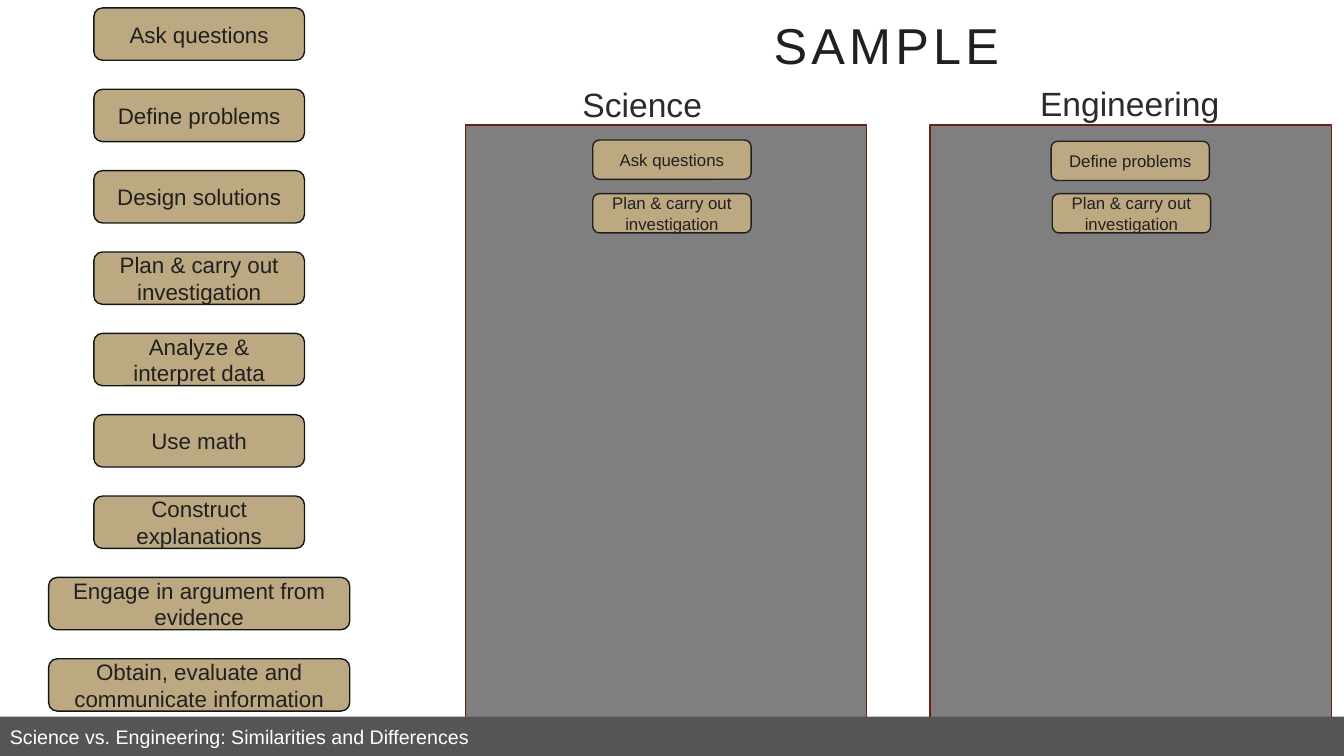
from dataclasses import dataclass

from pptx import Presentation
from pptx.dml.color import RGBColor
from pptx.enum.shapes import MSO_SHAPE as Preset
from pptx.enum.text import MSO_ANCHOR as Anchor, MSO_AUTO_SIZE as AutoSize, PP_ALIGN as Align
from pptx.slide import Slide
from pptx.text.text import TextFrame
from pptx.util import Cm, Pt

WHITE = RGBColor(0xFF, 0xFF, 0xFF)
INK = RGBColor(0x20, 0x20, 0x20)
LABEL_INK = RGBColor(0x2B, 0x2B, 0x2B)
CARD_EDGE = RGBColor(0x14, 0x17, 0x18)
TAN = RGBColor(0xBD, 0xA9, 0x81)
GRAY = RGBColor(0x7F, 0x7F, 0x7F)
MAROON = RGBColor(0x69, 0x20, 0x0F)
FOOTER_GRAY = RGBColor(0x55, 0x55, 0x56)

SLIDE_WIDTH, SLIDE_HEIGHT = 33.87, 19.05
CARD_CENTER, CARD_TOP, CARD_PITCH, CARD_HEIGHT = 5.02, 0.2, 2.05, 1.32
NARROW, WIDE = 5.31, 7.59


@dataclass
class Box:
    """A rectangle in centimetres."""
    left: float
    top: float
    width: float
    height: float

    def lengths(self) -> list[Cm]:
        return [Cm(v) for v in (self.left, self.top, self.width, self.height)]


@dataclass
class Column:
    heading: str
    heading_box: Box
    panel: Box
    cards: list[tuple[str, Box]]


PRACTICES = [
    ("Ask questions", NARROW),
    ("Define problems", NARROW),
    ("Design solutions", NARROW),
    ("Plan & carry out investigation", NARROW),
    ("Analyze & interpret data", NARROW),
    ("Use math", NARROW),
    ("Construct explanations", NARROW),
    ("Engage in argument from evidence", WIDE),
    ("Obtain, evaluate and communicate information", WIDE),
]

COLUMNS = [
    Column("Science", Box(14.43, 1.98, 7.09, 1.27), Box(11.73, 3.15, 10.11, 14.94), [
        ("Ask questions", Box(14.94, 3.53, 3.99, 0.99)),
        ("Plan & carry out investigation", Box(14.94, 4.88, 3.99, 0.99)),
    ]),
    Column("Engineering", Box(25.96, 1.96, 7.09, 1.27), Box(23.44, 3.15, 10.11, 14.96), [
        ("Define problems", Box(26.49, 3.56, 3.99, 0.99)),
        ("Plan & carry out investigation", Box(26.52, 4.88, 3.99, 0.99)),
    ]),
]


def apply(target: object, values: dict[str, object]) -> None:
    for name, value in values.items():
        setattr(target, name, value)


def write(frame: TextFrame, text: str, size: float, color: RGBColor,
          align: Align = Align.CENTER, anchor: Anchor = Anchor.MIDDLE) -> None:
    apply(frame, {"text": text, "word_wrap": True, "vertical_anchor": anchor})
    paragraph = frame.paragraphs[0]
    paragraph.alignment = align
    font = paragraph.runs[0].font
    apply(font, {"name": "Arial", "size": Pt(size)})
    font.color.rgb = color


def add_block(slide: Slide, preset: Preset, box: Box, fill: RGBColor,
              edge: RGBColor | None = None) -> TextFrame:
    shape = slide.shapes.add_shape(preset, *box.lengths())
    shape.shadow.inherit = False
    shape.fill.solid()
    shape.fill.fore_color.rgb = fill
    if edge is None:
        shape.line.fill.background()
    else:
        shape.line.color.rgb = edge
        shape.line.width = Pt(1)
    return shape.text_frame


def add_card(slide: Slide, text: str, box: Box, size: float, edge: RGBColor) -> None:
    write(add_block(slide, Preset.ROUNDED_RECTANGLE, box, TAN, edge), text, size, INK)


def add_title(slide: Slide) -> None:
    title = slide.shapes.title
    box = Box(9.22, 0.28, 26.24, 1.75)
    apply(title, dict(zip(("left", "top", "width", "height"), box.lengths())))
    write(title.text_frame, "SAMPLE", 36, INK, anchor=Anchor.BOTTOM)
    title.text_frame.auto_size = AutoSize.NONE
    paragraph = title.text_frame.paragraphs[0]
    paragraph.line_spacing = 0.9
    paragraph.runs[0].font._element.set("spc", "300")


def add_heading(slide: Slide, column: Column) -> None:
    frame = slide.shapes.add_textbox(*column.heading_box.lengths()).text_frame
    write(frame, column.heading, 24, LABEL_INK, Align.LEFT, Anchor.TOP)
    frame.auto_size = AutoSize.SHAPE_TO_FIT_TEXT


def add_footer(slide: Slide) -> None:
    frame = add_block(slide, Preset.RECTANGLE, Box(0, 18.06, SLIDE_WIDTH, 0.99), FOOTER_GRAY)
    write(frame, "Science vs. Engineering: Similarities and Differences", 14, WHITE, Align.LEFT)
    apply(frame, {"margin_top": Cm(0.18), "margin_bottom": Cm(0.18)})


def main() -> None:
    presentation = Presentation()
    apply(presentation, {"slide_width": Cm(SLIDE_WIDTH), "slide_height": Cm(SLIDE_HEIGHT)})
    slide = presentation.slides.add_slide(presentation.slide_layouts[5])
    add_title(slide)

    # Sorting panels
    for column in COLUMNS:
        add_block(slide, Preset.RECTANGLE, column.panel, GRAY, MAROON)

    # Cards waiting to be sorted
    for row, (text, width) in enumerate(PRACTICES):
        box = Box(CARD_CENTER - width / 2, CARD_TOP + row * CARD_PITCH, width, CARD_HEIGHT)
        add_card(slide, text, box, 16, CARD_EDGE)

    # Headings and sorted cards
    for column in COLUMNS:
        add_heading(slide, column)
        for text, box in column.cards:
            add_card(slide, text, box, 12, INK)

    add_footer(slide)
    presentation.save("out.pptx")


if __name__ == "__main__":
    main()
